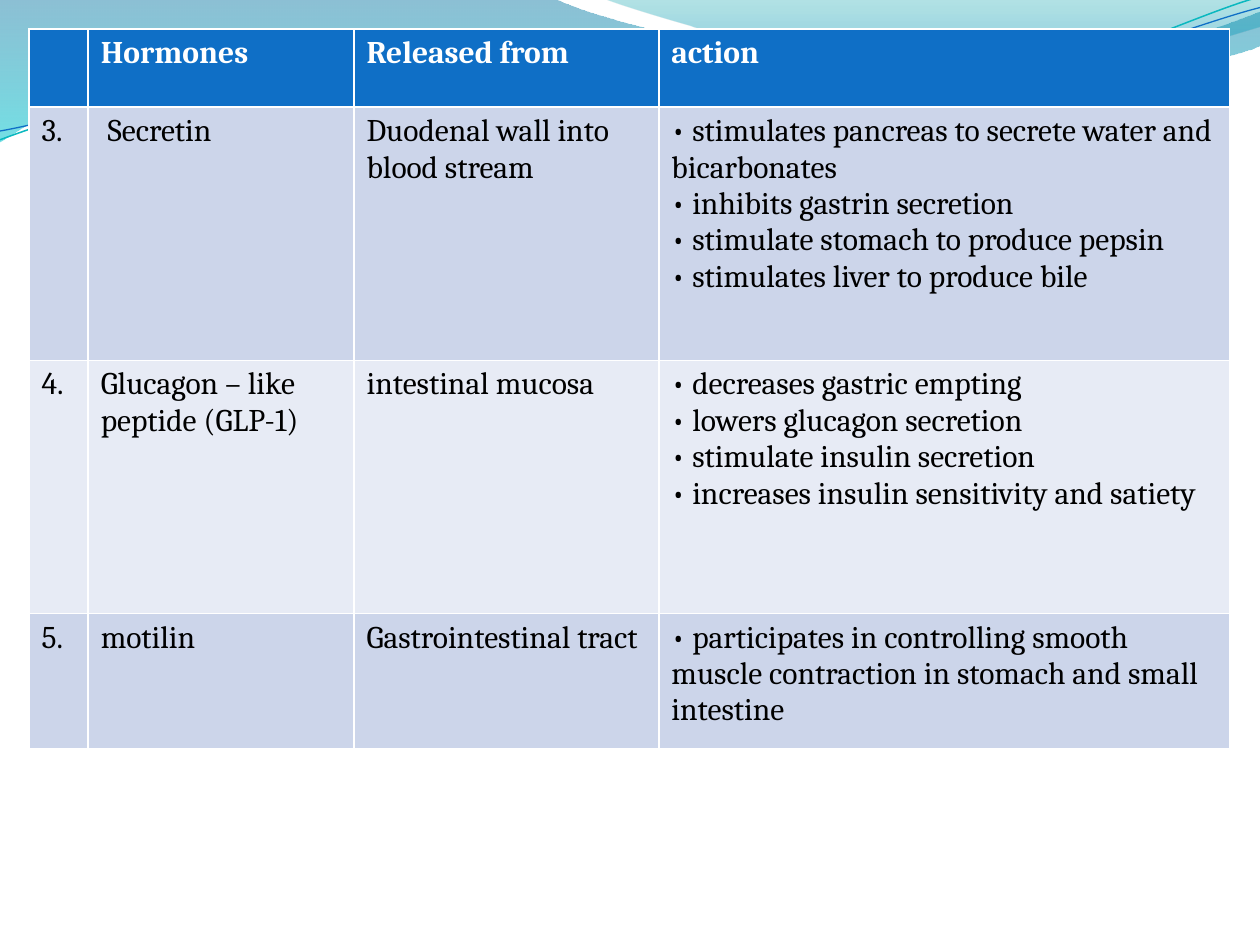
from lxml import etree
from pptx import Presentation
from pptx.dml.color import RGBColor
from pptx.oxml.ns import qn
from pptx.util import Inches, Pt

COLORS = {
    "white": "FFFFFF", "black": "000000", "header": "0F6FC6",
    "odd": "CCD5EA", "even": "E7EBF5", "teal": "0AB8BF",
    "deep": "0074A1", "aqua": "00C6CF", "sea": "00A1A9", "sky": "008BBF",
}
FONT = "Cambria"
BULLET = "•"

HEADERS = ["", "Hormones", "Released from", "action"]
HORMONES = [
    ("3.", " Secretin", "Duodenal wall into blood stream", [
        "stimulates pancreas to secrete water and bicarbonates",
        "inhibits gastrin secretion",
        "stimulate stomach to produce pepsin",
        "stimulates liver to produce bile",
    ]),
    ("4.", "Glucagon – like peptide (GLP-1)", "intestinal mucosa", [
        "decreases gastric empting",
        "lowers glucagon secretion",
        "stimulate insulin secretion",
        "increases insulin sensitivity and satiety",
    ]),
    ("5.", "motilin", "Gastrointestinal tract", [
        "participates in controlling smooth muscle contraction in stomach and small intestine",
    ]),
]
COLUMN_WIDTHS = [0.47, 2.11, 2.42, 4.53]
ROW_HEIGHTS = [0.62, 2.01, 2.01, 1.07]

FILLED_WAVES = [
    ([[(0, 0)], [(4.4, -0.01)],
      [(4.76, 0.17), (6.64, 0.63), (7.58, 0.63)],
      [(8.53, 0.63), (9.58, 0.26), (10, 0.09)],
      [(10.01, 0.36)],
      [(9.83, 0.44), (8.7, 0.76), (7.46, 0.75)],
      [(6.22, 0.75), (3.82, 0.28), (2.57, 0.34)],
      [(1.29, 0.36), (0.46, 0.83), (-0.01, 1.13)],
      [(0, 0)]],
     [(0, "deep", 45), (1, "aqua", 55)]),
    ([[(4.79, -0.01)],
      [(5.09, 0.11), (6.82, 0.62), (7.69, 0.65)],
      [(8.56, 0.69), (9.61, 0.32), (10, 0.21)],
      [(10, 0)], [(4.79, -0.01)]],
     [(0, "sea", 30), (0.8, "sky", 45)]),
]
LINE_WAVES = [
    ([[(0, 1.11)],
      [(0.48, 0.93), (1.58, 0.57), (2.77, 0.52)],
      [(3.95, 0.47), (5.93, 0.89), (7.13, 0.8)],
      [(8.33, 0.71), (9.38, 0.15), (9.98, -0.02)]],
     "teal", 0.85),
    ([[(0, 1.04)],
      [(0.47, 0.96), (1.64, 0.61), (2.83, 0.56)],
      [(4.03, 0.51), (5.97, 0.84), (7.17, 0.75)],
      [(8.36, 0.67), (9.41, 0.21), (10, 0.06)]],
     "header", 0.75),
]


def rgb(name):
    return RGBColor.from_string(COLORS[name])


def add_wave(page, segments, closed):
    ends = [(Inches(x), Inches(y)) for x, y in (segment[-1] for segment in segments)]
    builder = page.shapes.build_freeform(*ends[0])
    builder.add_line_segments(ends[1:], close=closed)
    wave = builder.convert_to_shape()
    wave.shadow.inherit = False
    lines = list(wave._element.iter(qn("a:lnTo")))
    for line, segment in zip(lines, segments[1:]):
        if len(segment) == 3:
            curve = etree.Element(qn("a:cubicBezTo"))
            for x, y in segment:
                etree.SubElement(curve, qn("a:pt"), x=str(Inches(x) - wave.left),
                                 y=str(Inches(y) - wave.top))
            line.getparent().replace(line, curve)
    return wave


def add_filled_wave(page, segments, stops):
    wave = add_wave(page, segments, True)
    wave.line.fill.background()
    wave.fill.gradient()
    wave.fill.gradient_angle = 270
    elements = wave._element.iter(qn("a:gs"))
    for stop, element, (position, color, opacity) in zip(
            wave.fill.gradient_stops, elements, stops):
        stop.position = position
        stop.color.rgb = rgb(color)
        etree.SubElement(element[0], qn("a:alpha"), val=str(opacity * 1000))


def add_line_wave(page, segments, color, width):
    wave = add_wave(page, segments, False)
    wave.fill.background()
    wave.line.color.rgb = rgb(color)
    wave.line.width = Pt(width)


def add_bullet(para):
    properties = para._p.get_or_add_pPr()
    properties.set("marL", "0")
    properties.set("indent", "0")
    defaults = properties.find(qn("a:defRPr"))
    defaults.addprevious(etree.Element(qn("a:buFont"), typeface=FONT))
    defaults.addprevious(etree.Element(qn("a:buChar"), char=BULLET))


def fill_cell(cell, content, fill, color, bold):
    cell.fill.solid()
    cell.fill.fore_color.rgb = rgb(fill)
    bulleted = isinstance(content, list)
    lines = [" " + line for line in content] if bulleted else [content]
    cell.text = "\n".join(lines)
    for para in cell.text_frame.paragraphs:
        para.font.name = FONT
        para.font.size = Pt(18)
        para.font.bold = bold
        para.font.color.rgb = rgb(color)
        if bulleted:
            add_bullet(para)


def add_hormone_table(page):
    rows = [HEADERS] + HORMONES
    table = page.shapes.add_table(
        len(rows), len(HEADERS), Inches(0.23), Inches(0.23),
        Inches(sum(COLUMN_WIDTHS)), Inches(sum(ROW_HEIGHTS))).table
    for column, width in zip(table.columns, COLUMN_WIDTHS):
        column.width = Inches(width)
    for index, (row, height, contents) in enumerate(zip(table.rows, ROW_HEIGHTS, rows)):
        row.height = Inches(height)
        header = index == 0
        fill = "header" if header else "odd" if index % 2 else "even"
        color = "white" if header else "black"
        for cell, content in zip(row.cells, contents):
            fill_cell(cell, content, fill, color, header)


def main():
    deck = Presentation()
    deck.slide_width, deck.slide_height = Inches(10), Inches(7.5)
    page = deck.slides.add_slide(deck.slide_layouts[6])
    for segments, stops in FILLED_WAVES:
        add_filled_wave(page, segments, stops)
    for segments, color, width in LINE_WAVES:
        add_line_wave(page, segments, color, width)
    add_hormone_table(page)
    deck.save("out.pptx")


if __name__ == "__main__":
    main()
